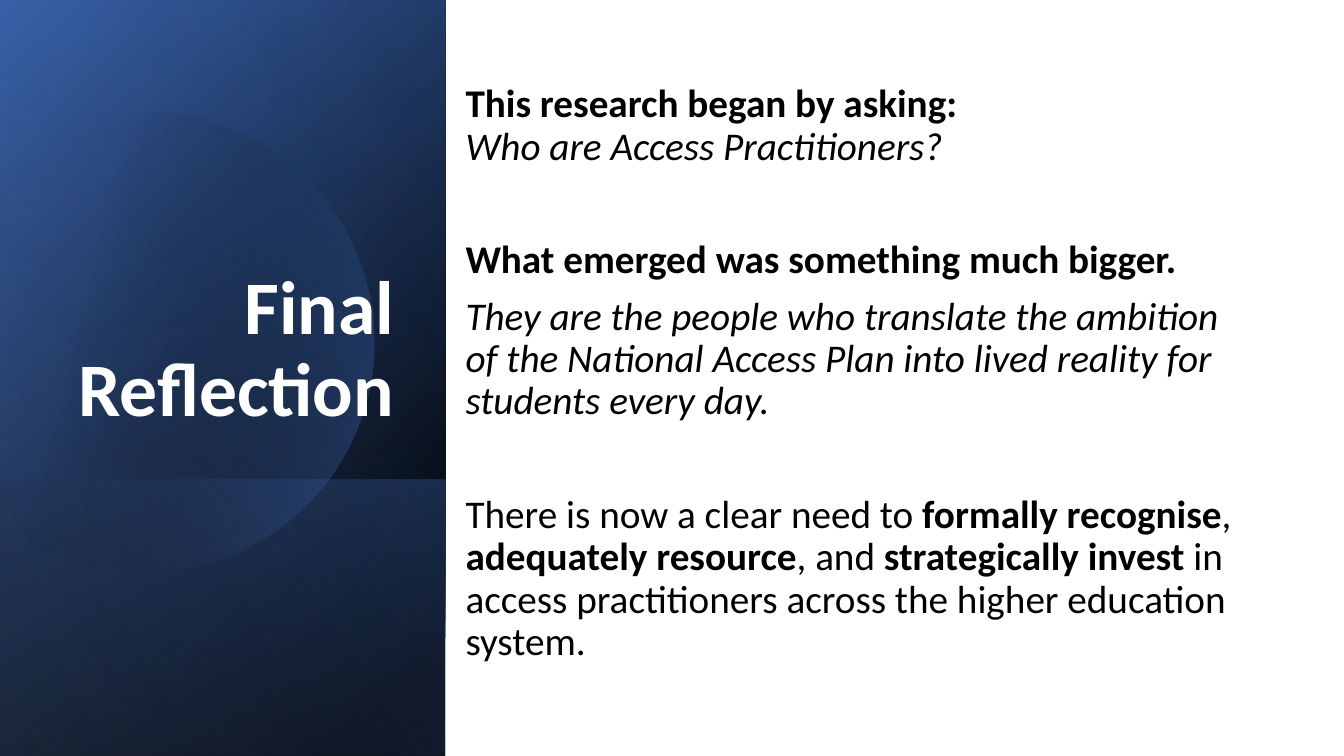
import math
from dataclasses import dataclass

from lxml import etree
from pptx import Presentation
from pptx import util as u
from pptx.dml.color import RGBColor
from pptx.enum import shapes, text
from pptx.oxml.ns import qn


@dataclass(frozen=True)
class Theme:
    font: str = "Calibri"
    title_size: int = 54
    body_size: int = 28
    line_spacing: float = 0.9
    white: str = "FFFFFF"
    black: str = "000000"
    deep_blue: str = "2F5597"
    blue: str = "4472C4"
    pale_blue: str = "8FAADC"


class SlideBuilder:
    def __init__(self, slide, theme):
        self.slide = slide
        self.theme = theme

    def gradient(self, shape, stops, angle):
        """Fill with (position %, colour, opacity %) stops; angle runs clockwise."""
        shape.shadow.inherit = False
        shape.line.fill.background()
        shape.fill.gradient()
        shape.fill.gradient_angle = 360 - angle
        for stop, (position, colour, _) in zip(shape.fill.gradient_stops, stops):
            stop.position = position / 100
            stop.color.rgb = RGBColor.from_string(colour)
        colours = shape._element.spPr.iter(qn("a:srgbClr"))
        for colour, (_, _, opacity) in zip(colours, stops):
            if opacity < 100:
                alpha = etree.SubElement(colour, qn("a:alpha"))
                alpha.set("val", str(opacity * 1000))

    def turned_panel(self, left, top, width, height, stops, angle):
        """Mirrored rectangle, turned a quarter, that covers the given area."""
        shift = (height - width) / 2
        panel = self.slide.shapes.add_shape(
            shapes.MSO_SHAPE.RECTANGLE,
            u.Pt(left - shift), u.Pt(top + shift), u.Pt(height), u.Pt(width))
        panel.rotation = 90
        panel._element.spPr.get_or_add_xfrm().set("flipH", "1")
        self.gradient(panel, stops, angle)

    def cut_circle(self, centre_x, centre_y, radius, cut_x, stops, angle):
        """Circle with a straight left edge at cut_x."""
        limit = math.acos((cut_x - centre_x) / radius)
        steps = 120
        angles = [limit * (2 * i / steps - 1) for i in range(steps + 1)]
        points = [(u.Pt(centre_x + radius * math.cos(a)),
                   u.Pt(centre_y + radius * math.sin(a))) for a in angles]
        outline = self.slide.shapes.build_freeform(*points[0])
        outline.add_line_segments(points[1:], close=True)
        self.gradient(outline.convert_to_shape(), stops, angle)

    def text_box(self, left, top, width, height, anchor, paragraphs,
                 size, colour, align):
        """Each paragraph is (space before, [(words, bold, italic), ...])."""
        box = self.slide.shapes.add_textbox(
            u.Pt(left), u.Pt(top), u.Pt(width), u.Pt(height))
        frame = box.text_frame
        frame.word_wrap = True
        frame.vertical_anchor = anchor
        for i, (space, runs) in enumerate(paragraphs):
            paragraph = frame.add_paragraph() if i else frame.paragraphs[0]
            paragraph.alignment = align
            paragraph.line_spacing = self.theme.line_spacing
            paragraph.space_before = u.Pt(space)
            paragraph.font.name = self.theme.font
            paragraph.font.size = u.Pt(size)
            paragraph.font.color.rgb = RGBColor.from_string(colour)
            for words, bold, italic in runs:
                run = paragraph.add_run()
                run.text = words.rstrip("\n")
                if words.endswith("\n"):
                    paragraph.add_line_break()
                font = run.font if len(runs) > 1 else paragraph.font
                font.bold = bold
                font.italic = italic


def main():
    theme = Theme()
    deck = Presentation()
    deck.slide_width, deck.slide_height = u.Pt(960), u.Pt(540)
    builder = SlideBuilder(deck.slides.add_slide(deck.slide_layouts[6]), theme)
    background = builder.slide.background.fill
    background.solid()
    background.fore_color.rgb = RGBColor.from_string(theme.white)

    # Blue side panel: layered gradients with a faint circle
    side = (0, 0, 318.24, 540)
    lower_side = (0, 342.72, 318.24, 197.28)
    builder.turned_panel(
        *side, [(8, theme.black, 100), (100, theme.deep_blue, 100)], 50)
    builder.turned_panel(
        *side, [(0, theme.black, 0), (99, theme.blue, 46)], 30)
    builder.turned_panel(
        *lower_side, [(2, theme.blue, 29), (100, theme.black, 30)], 130)
    builder.cut_circle(
        103, 244, 164.5, -11, [(29, theme.black, 0), (100, theme.blue, 43)], 14)
    builder.turned_panel(
        *side, [(0, theme.black, 0), (99, theme.pale_blue, 11)], 120)

    # Title
    builder.text_box(
        36.72, 46.08, 252, 266.4, text.MSO_ANCHOR.BOTTOM,
        [(0, [("Final Reflection", True, False)])],
        theme.title_size, theme.white, text.PP_ALIGN.RIGHT)

    # Reflection: three groups of paragraphs
    near, far = 10, 51
    reflection = [
        (0, [("This research began by asking:\n", True, False),
             ("Who are Access Practitioners?", False, True)]),
        (far, [("What emerged was something much bigger.", True, False)]),
        (near, [("They are the people who translate the ambition of the "
                 "National Access Plan into lived reality for students "
                 "every day.", False, True)]),
        (far, [("There is now a clear need to ", False, False),
               ("formally recognise", True, False),
               (", ", False, False),
               ("adequately resource", True, False),
               (", and ", False, False),
               ("strategically invest ", True, False),
               ("in access practitioners across the higher education system.",
                False, False)]),
    ]
    builder.text_box(
        325.44, 12.24, 569.52, 509.76, text.MSO_ANCHOR.MIDDLE, reflection,
        theme.body_size, theme.black, text.PP_ALIGN.LEFT)

    deck.save("out.pptx")


if __name__ == "__main__":
    main()
